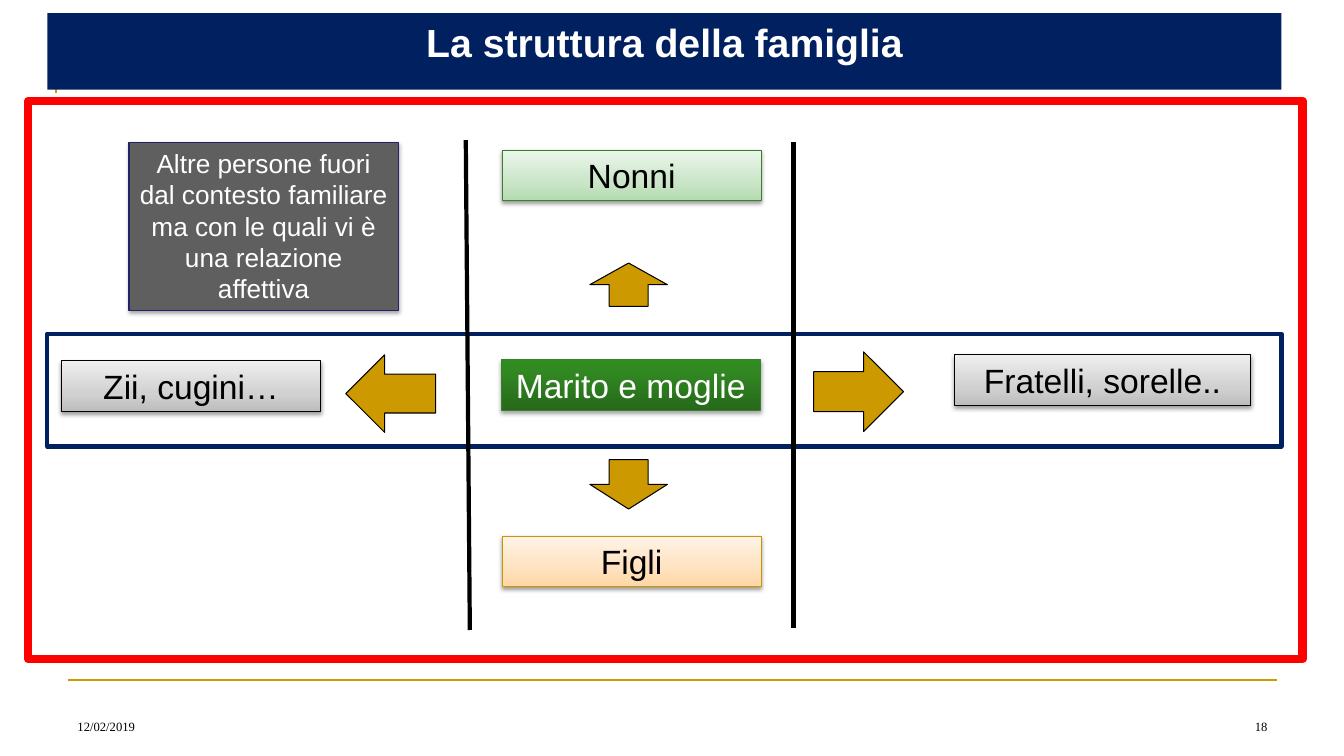
from pptx import Presentation
from pptx.dml.color import RGBColor
from pptx.enum.shapes import MSO_CONNECTOR, MSO_SHAPE as Preset
from pptx.enum.text import MSO_ANCHOR as Anchor, PP_ALIGN as Align
from pptx.oxml.ns import qn
from pptx.util import Inches, Pt
from lxml.etree import SubElement

BLACK = RGBColor(0x00, 0x00, 0x00)
WHITE = RGBColor(0xFF, 0xFF, 0xFF)
NAVY = RGBColor(0x00, 0x20, 0x60)
RED = RGBColor(0xFF, 0x00, 0x00)
GOLD = RGBColor(0xCC, 0x99, 0x00)
DARK_GOLD = RGBColor(0xC8, 0x96, 0x00)
GREEN = RGBColor(0x38, 0x80, 0x2C)
GREY = RGBColor(0x5F, 0x5F, 0x5F)
INDIGO = RGBColor(0x22, 0x22, 0x68)

# Gradients run from the bottom up: position in percent, colour
DEEP_GREEN_BLEND = [(0, "26691A"), (80, "318922"), (100, "308C20")]
PALE_GREEN_BLEND = [(0, "B3DBB0"), (35, "CAE5C8"), (100, "EBF6EA")]
ORANGE_BLEND = [(0, "FFD6A5"), (35, "FFE2BF"), (100, "FFF3E7")]
GREY_BLEND = [(0, "BDBDBD"), (35, "D1D1D1"), (100, "EEEEEE")]


def write_text(shape, text, size=24, font="Arial", color=BLACK, bold=False,
               align=Align.CENTER, anchor=Anchor.TOP):
    frame = shape.text_frame
    frame.word_wrap = True
    frame.vertical_anchor = anchor
    frame.margin_left = frame.margin_right = Inches(0.1)
    frame.margin_top = frame.margin_bottom = Inches(0.05)
    paragraph = frame.paragraphs[0]
    paragraph.alignment = align
    run = paragraph.add_run()
    run.text = text
    run.font.size = Pt(size)
    run.font.name = font
    run.font.bold = bold
    run.font.color.rgb = color


def add_preset(slide, preset, box, fill, line, line_width=0.75):
    shape = slide.shapes.add_shape(preset, *map(Inches, box))
    shape.shadow.inherit = False
    if isinstance(fill, list):
        fill_gradient(shape, fill)
    else:
        shape.fill.solid()
        shape.fill.fore_color.rgb = fill
    shape.line.color.rgb = line
    shape.line.width = Pt(line_width)
    return shape


def fill_gradient(shape, blend):
    shape.fill.gradient()
    shape.fill.gradient_angle = 90
    stops = shape._element.spPr.find(qn("a:gradFill")).find(qn("a:gsLst"))
    for stop in list(stops):
        stops.remove(stop)
    for position, color in blend:
        stop = SubElement(stops, qn("a:gs"), pos=str(position * 1000))
        SubElement(stop, qn("a:srgbClr"), val=color)


def add_shadow(shape, opacity, distance):
    effects = shape._element.spPr.find(qn("a:effectLst"))
    shadow = SubElement(effects, qn("a:outerShdw"), blurRad=str(Pt(3.1)),
                        dist=str(Pt(distance)), dir="5400000", rotWithShape="0")
    color = SubElement(shadow, qn("a:srgbClr"), val="000000")
    SubElement(color, qn("a:alpha"), val=str(opacity * 1000))


def add_label(slide, text, box, fill, line, color=BLACK, size=24):
    label = add_preset(slide, Preset.RECTANGLE, box, fill, line)
    if color == WHITE:
        add_shadow(label, 35, 1.8)
    else:
        add_shadow(label, 38, 1.6)
    write_text(label, text, size=size, color=color)


def add_rule(slide, start, end, color, width):
    rule = slide.shapes.add_connector(MSO_CONNECTOR.STRAIGHT,
                                      *map(Inches, start + end))
    rule.line.color.rgb = color
    rule.line.width = Pt(width)
    SubElement(rule._element.spPr, qn("a:effectLst"))


def add_backdrop(slide, box):
    """Gold corner line behind the title and gold rule above the footer."""
    left, top, width, height = box
    builder = slide.shapes.build_freeform(Inches(left), Inches(top + 0.67))
    builder.add_line_segments([(Inches(left), Inches(top)),
                               (Inches(left + width), Inches(top))], close=False)
    corner = builder.convert_to_shape()
    corner.shadow.inherit = False
    corner.fill.background()
    corner.line.color.rgb = GOLD
    corner.line.width = Pt(1.5)
    bottom = top + height
    add_rule(slide, (left + 0.11, bottom), (left + 0.11 + width, bottom), GOLD, 1.5)


def add_title(slide, box, text):
    title = slide.shapes.title
    title.left, title.top, title.width, title.height = map(Inches, box)
    title.fill.solid()
    title.fill.fore_color.rgb = NAVY
    write_text(title, text, size=28, color=WHITE, bold=True)
    slide.shapes._spTree.append(title._element)  # bring in front of the backdrop


def add_family_map(slide, box):
    left, top, width, height = box
    add_preset(slide, Preset.RECTANGLE, box, WHITE, RED, 6)
    add_preset(slide, Preset.RECTANGLE,
               (left + 0.19, top + 2.31, width - 0.4, 1.12), WHITE, NAVY, 3)

    # Dividers between the three columns
    add_rule(slide, (left + 4.34, top + 0.39), (left + 4.38, top + 5.25), BLACK, 3)
    add_rule(slide, (left + 7.59, top + 0.41), (left + 7.59, top + 5.23), BLACK, 3)

    # Family members: text, left, top, width, fill, line, text colour
    members = [
        ("Nonni", 4.7, 0.49, 2.57, PALE_GREEN_BLEND, GREEN, BLACK),
        ("Marito e moglie", 4.69, 2.57, 2.57, DEEP_GREEN_BLEND, GREEN, WHITE),
        ("Figli", 4.7, 4.32, 2.57, ORANGE_BLEND, DARK_GOLD, BLACK),
        ("Zii, cugini…", 0.33, 2.58, 2.57, GREY_BLEND, BLACK, BLACK),
        ("Fratelli, sorelle..", 9.19, 2.52, 2.93, GREY_BLEND, BLACK, BLACK),
    ]
    for text, x, y, label_width, fill, line, color in members:
        add_label(slide, text, (left + x, top + y, label_width, 0.5),
                  fill, line, color)

    # Arrows leading out from the couple
    arrows = [
        (Preset.UP_ARROW, 5.57, 1.61, 0.77, 0.43),
        (Preset.DOWN_ARROW, 5.57, 3.56, 0.77, 0.49),
        (Preset.LEFT_ARROW, 3.15, 2.52, 0.89, 0.77),
        (Preset.RIGHT_ARROW, 7.79, 2.49, 0.89, 0.79),
    ]
    for preset, x, y, arrow_width, arrow_height in arrows:
        add_preset(slide, preset, (left + x, top + y, arrow_width, arrow_height),
                   GOLD, BLACK)

    # People outside the family
    add_label(slide, "Altre persone fuori dal contesto familiare ma con le quali "
              "vi è una relazione affettiva", (left + 1, top + 0.41, 2.67, 1.67),
              GREY, INDIGO, WHITE, size=18.7)


def add_footer(slide, box, date, number):
    left, top, width, height = box
    field_width = 3.11
    for text, x, align in ((date, left, Align.LEFT),
                           (number, left + width - field_width, Align.RIGHT)):
        field = slide.shapes.add_textbox(*map(Inches, (x, top, field_width, height)))
        write_text(field, text, size=9, font="Times New Roman", align=align,
                   anchor=Anchor.BOTTOM)


def main():
    presentation = Presentation()
    presentation.slide_width = Inches(13.33)
    presentation.slide_height = Inches(7.5)
    slide = presentation.slides.add_slide(presentation.slide_layouts[5])
    add_backdrop(slide, (0.56, 0.25, 12, 6.5))
    add_title(slide, (0.47, 0.13, 12.24, 0.76), "La struttura della famiglia")
    add_family_map(slide, (0.28, 1, 12.64, 5.54))
    add_footer(slide, (0.67, 6.83, 12, 0.5), "12/02/2019", "18")
    presentation.save("out.pptx")


if __name__ == "__main__":
    main()
